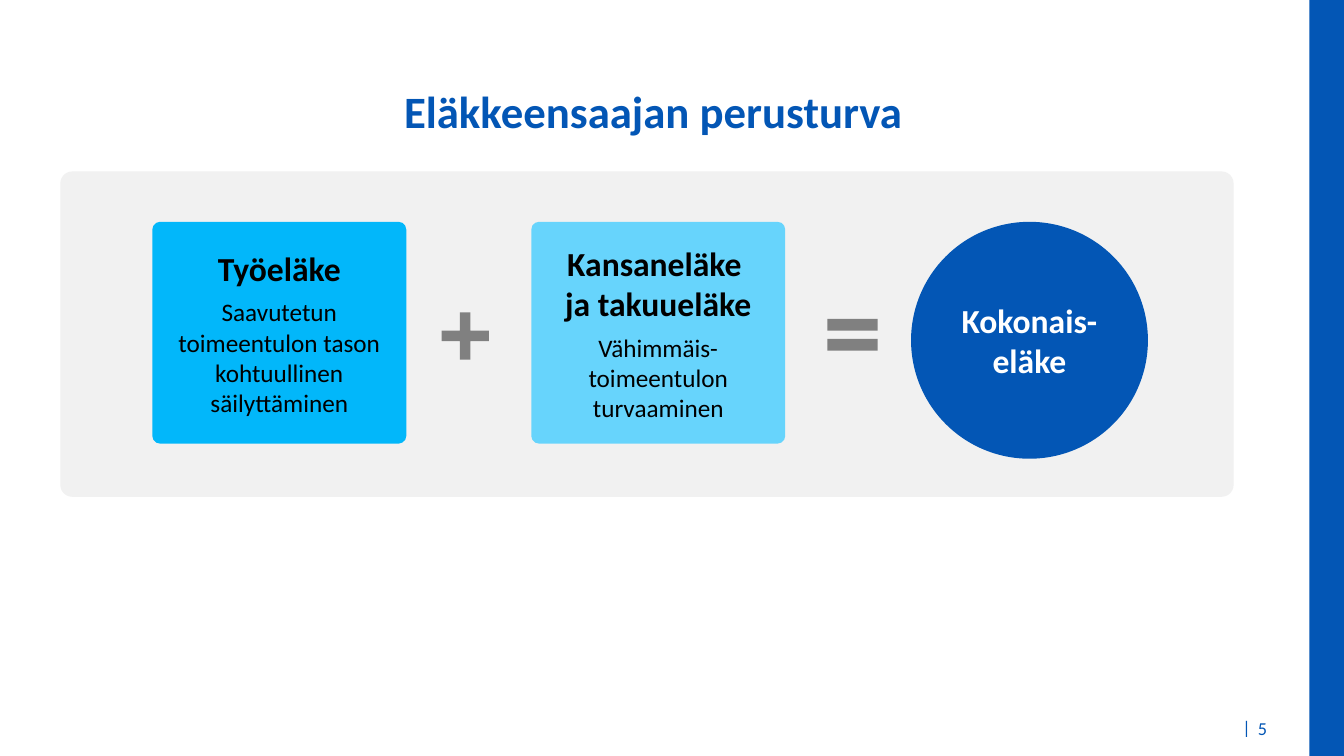
from dataclasses import dataclass

from pptx import Presentation
from pptx.dml.color import RGBColor
from pptx.enum.shapes import MSO_SHAPE as Shape
from pptx.enum.text import MSO_ANCHOR as Anchor, PP_ALIGN as Align
from pptx.util import Cm, Pt


@dataclass(frozen=True)
class Theme:
    """Colours, typeface and type sizes of the slide."""

    font: str = "Calibri"
    blue: str = "0356B5"
    cyan: str = "02B7FA"
    sky: str = "67D4FC"
    panel: str = "F1F1F1"
    operator: str = "808080"
    black: str = "000000"
    white: str = "FFFFFF"
    title_size: int = 32
    heading_size: int = 24
    body_size: int = 18
    footer_size: int = 13


class SlideBuilder:
    """Draws styled elements on the current slide, with lengths in centimetres."""

    def __init__(self, slide, theme):
        """Keep the slide and the theme."""
        self.slide = slide
        self.theme = theme

    def set_lines(self, frame, lines, color, align=Align.CENTER, anchor=Anchor.MIDDLE):
        """Fill a frame with (text, size, bold, space after) lines."""
        frame.text = "\n".join(line[0] for line in lines)
        frame.vertical_anchor = anchor
        for paragraph, (_, size, bold, after) in zip(frame.paragraphs, lines):
            paragraph.alignment = align
            paragraph.space_after = Pt(after)
            for run in paragraph.runs:
                run.font.name = self.theme.font
                run.font.size = Pt(size)
                run.font.bold = bold
                run.font.color.rgb = RGBColor.from_string(color)

    def label(self, box, text, size, bold=False, wrap=True, **layout):
        """Add a blue text box."""
        frame = self.slide.shapes.add_textbox(*map(Cm, box)).text_frame
        frame.word_wrap = wrap
        self.set_lines(frame, [(text, size, bold, 0)], self.theme.blue, **layout)

    def figure(self, kind, box, fill, adjustments=()):
        """Add a filled shape without outline or shadow."""
        figure = self.slide.shapes.add_shape(kind, *map(Cm, box))
        figure.shadow.inherit = False
        figure.fill.solid()
        figure.fill.fore_color.rgb = RGBColor.from_string(fill)
        figure.line.fill.background()
        for index, value in enumerate(adjustments):
            figure.adjustments[index] = value
        return figure

    def pension_card(self, left, top, fill, heading, purpose):
        """Add a rounded card with a heading and its purpose."""
        card = self.figure(Shape.ROUNDED_RECTANGLE, (left, top, 6.4, 5.59), fill, [0.035])
        lines = [
            (heading, self.theme.heading_size, True, 6),
            (purpose, self.theme.body_size, False, 0),
        ]
        self.set_lines(card.text_frame, lines, self.theme.black)

    def total_circle(self, left, top, diameter, words):
        """Add the circle that states the sum."""
        circle = self.figure(Shape.OVAL, (left, top, diameter, diameter), self.theme.blue)
        lines = [(word, self.theme.heading_size, True, 0) for word in words]
        self.set_lines(circle.text_frame, lines, self.theme.white)


def main():
    """Build and save the slide."""
    deck = Presentation()
    deck.slide_width, deck.slide_height = Cm(33.87), Cm(19.05)
    theme = Theme()
    builder = SlideBuilder(deck.slides.add_slide(deck.slide_layouts[6]), theme)

    builder.figure(Shape.RECTANGLE, (33, 0, 0.87, 19.05), theme.blue)
    builder.label((31.06, 17.93, 0.74, 0.89), "|", theme.footer_size,
                  wrap=False, align=Align.LEFT, anchor=Anchor.TOP)
    builder.label((31.45, 17.91, 1.12, 0.89), "5", theme.footer_size, align=Align.LEFT)
    builder.label((0, 1.98, 32.94, 2.34), "Eläkkeensaajan perusturva",
                  theme.title_size, bold=True, anchor=Anchor.TOP)

    builder.figure(Shape.ROUNDED_RECTANGLE, (1.52, 4.32, 29.57, 8.2), theme.panel, [0.037])
    row_top = 5.59
    builder.pension_card(3.84, row_top, theme.cyan, "Työeläke",
                         "Saavutetun toimeentulon tason kohtuullinen säilyttäminen")
    builder.figure(Shape.CROSS, (11.13, 7.87, 1.19, 1.19), theme.operator, [0.388])
    builder.pension_card(13.39, row_top, theme.sky, "Kansaneläke \vja takuueläke",
                         "Vähimmäis-toimeentulon turvaaminen")
    builder.figure(Shape.MATH_EQUAL, (20.62, 7.57, 1.73, 1.73), theme.operator, [0.172, 0.118])
    builder.total_circle(22.96, row_top, 5.97, ["Kokonais-", "eläke"])

    deck.save("out.pptx")


if __name__ == "__main__":
    main()
